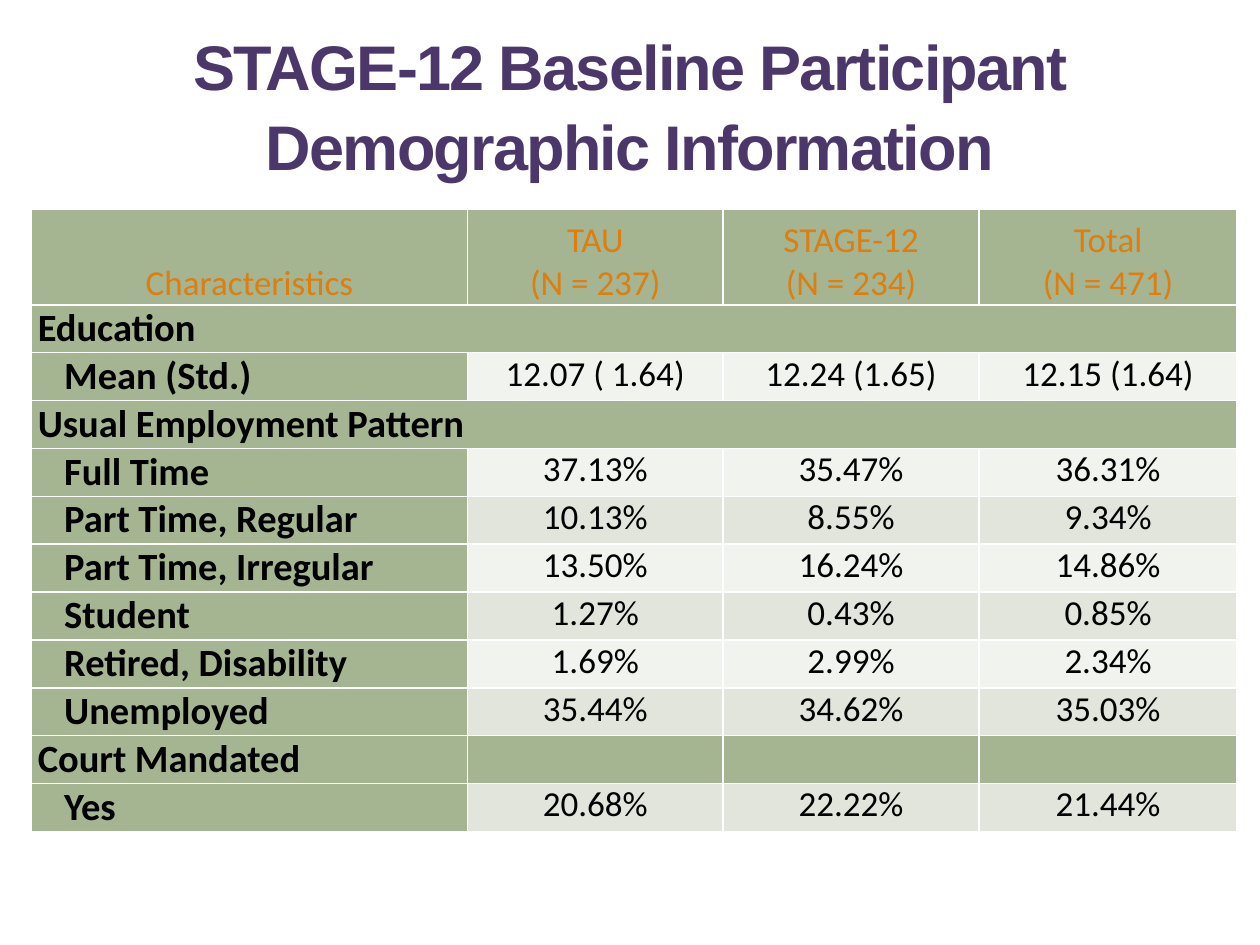
from dataclasses import dataclass

import pptx
import pptx.dml.color
import pptx.enum.text
import pptx.oxml
import pptx.oxml.ns
import pptx.slide
import pptx.table
import pptx.util
from pptx.util import Inches

CENTER = pptx.enum.text.PP_ALIGN.CENTER
LEFT = pptx.enum.text.PP_ALIGN.LEFT
BOTTOM = pptx.enum.text.MSO_ANCHOR.BOTTOM
TOP = pptx.enum.text.MSO_ANCHOR.TOP

GREEN = "A5B592"
BANDS = ("F0F3EE", "E1E5DC")
ORANGE = "DD7E0E"
PURPLE = "4C376B"
BLACK = "000000"
WHITE = "FFFFFF"


@dataclass(frozen=True)
class CellStyle:
    size: int
    color: str
    bold: bool = False
    align: int = CENTER
    anchor: int = TOP
    indent: float = 0.05


@dataclass(frozen=True)
class Characteristic:
    label: str
    values: tuple[str, ...] = ()
    spans_table: bool = False


HEADER = CellStyle(20, ORANGE, anchor=BOTTOM)
GROUP = CellStyle(22, BLACK, bold=True, align=LEFT)
ITEM = CellStyle(22, BLACK, bold=True, align=LEFT, indent=0.26)
VALUE = CellStyle(20, BLACK)

COLUMN_WIDTHS = (3.46, 2.03, 2.03, 2.05)
HEADER_HEIGHT, ROW_HEIGHT = 0.76, 0.38
HEADINGS = ("Characteristics", "TAU\n(N = 237)", "STAGE-12\n(N = 234)", "Total\n(N = 471)")
CHARACTERISTICS = (
    Characteristic("Education", spans_table=True),
    Characteristic("Mean (Std.)", ("12.07 ( 1.64)", "12.24 (1.65)", "12.15 (1.64)")),
    Characteristic("Usual Employment Pattern", spans_table=True),
    Characteristic("Full Time", ("37.13%", "35.47%", "36.31%")),
    Characteristic("Part Time, Regular", ("10.13%", "8.55%", "9.34%")),
    Characteristic("Part Time, Irregular", ("13.50%", "16.24%", "14.86%")),
    Characteristic("Student", ("1.27%", "0.43%", "0.85%")),
    Characteristic("Retired, Disability", ("1.69%", "2.99%", "2.34%")),
    Characteristic("Unemployed", ("35.44%", "34.62%", "35.03%")),
    Characteristic("Court Mandated"),
    Characteristic("Yes", ("20.68%", "22.22%", "21.44%")),
)


def rgb(color: str) -> pptx.dml.color.RGBColor:
    return pptx.dml.color.RGBColor.from_string(color)


def add_borders(cell: pptx.table._Cell) -> None:
    """Give the cell 1 pt white borders; call before setting its fill."""
    properties = cell._tc.get_or_add_tcPr()
    for side in ("lnL", "lnR", "lnT", "lnB"):
        properties.append(pptx.oxml.parse_xml(
            f'<a:{side} {pptx.oxml.ns.nsdecls("a")} w="12700"><a:solidFill>'
            f'<a:srgbClr val="{WHITE}"/></a:solidFill></a:{side}>'
        ))


def fill_cell(cell: pptx.table._Cell, text: str, style: CellStyle, background: str) -> None:
    add_borders(cell)
    cell.fill.solid()
    cell.fill.fore_color.rgb = rgb(background)
    cell.margin_left, cell.margin_right = Inches(style.indent), Inches(0.05)
    cell.margin_top = cell.margin_bottom = 0
    cell.vertical_anchor = style.anchor
    cell.text = text
    for paragraph in cell.text_frame.paragraphs:
        paragraph.alignment = style.align
        paragraph.font.name = "Calibri"
        paragraph.font.size = pptx.util.Pt(style.size)
        paragraph.font.bold = style.bold
        paragraph.font.color.rgb = rgb(style.color)


def add_title(slide: pptx.slide.Slide) -> None:
    title = slide.shapes.title
    title.left, title.top = Inches(0.5), Inches(0.17)
    title.width, title.height = Inches(9), Inches(1.33)
    title.text_frame.auto_size = pptx.enum.text.MSO_AUTO_SIZE.NONE
    title.text_frame.vertical_anchor = BOTTOM
    heading = title.text_frame.paragraphs[0]
    heading.text = "STAGE-12 Baseline Participant Demographic Information"
    heading.alignment = CENTER
    heading.line_spacing = 1.05
    heading.font.name = "Arial"
    heading.font.size = pptx.util.Pt(36)
    heading.font.bold = True
    heading.font.color.rgb = rgb(PURPLE)
    heading.runs[0]._r.get_or_add_rPr().set("spc", "-100")


def add_demographics(slide: pptx.slide.Slide) -> None:
    row_heights = (HEADER_HEIGHT,) + (ROW_HEIGHT,) * len(CHARACTERISTICS)
    demographics = slide.shapes.add_table(
        len(row_heights), len(COLUMN_WIDTHS), Inches(0.25), Inches(1.66),
        Inches(sum(COLUMN_WIDTHS)), Inches(sum(row_heights)),
    ).table
    for column, width in zip(demographics.columns, COLUMN_WIDTHS):
        column.width = Inches(width)
    for row, height in zip(demographics.rows, row_heights):
        row.height = Inches(height)

    for column, heading in enumerate(HEADINGS):
        fill_cell(demographics.cell(0, column), heading, HEADER, GREEN)

    last_column = len(COLUMN_WIDTHS) - 1
    for row, entry in enumerate(CHARACTERISTICS, start=1):
        label_style = ITEM if entry.values else GROUP
        fill_cell(demographics.cell(row, 0), entry.label, label_style, GREEN)
        background = BANDS[row % 2] if entry.values else GREEN
        for column, value in enumerate(entry.values or ("",) * last_column, start=1):
            fill_cell(demographics.cell(row, column), value, VALUE, background)
        if entry.spans_table:
            demographics.cell(row, 0).merge(demographics.cell(row, last_column))


def main() -> None:
    presentation = pptx.Presentation()
    presentation.slide_width, presentation.slide_height = Inches(10), Inches(7.5)
    slide = presentation.slides.add_slide(presentation.slide_layouts.get_by_name("Title Only"))
    add_title(slide)
    add_demographics(slide)
    presentation.save("out.pptx")


if __name__ == "__main__":
    main()
